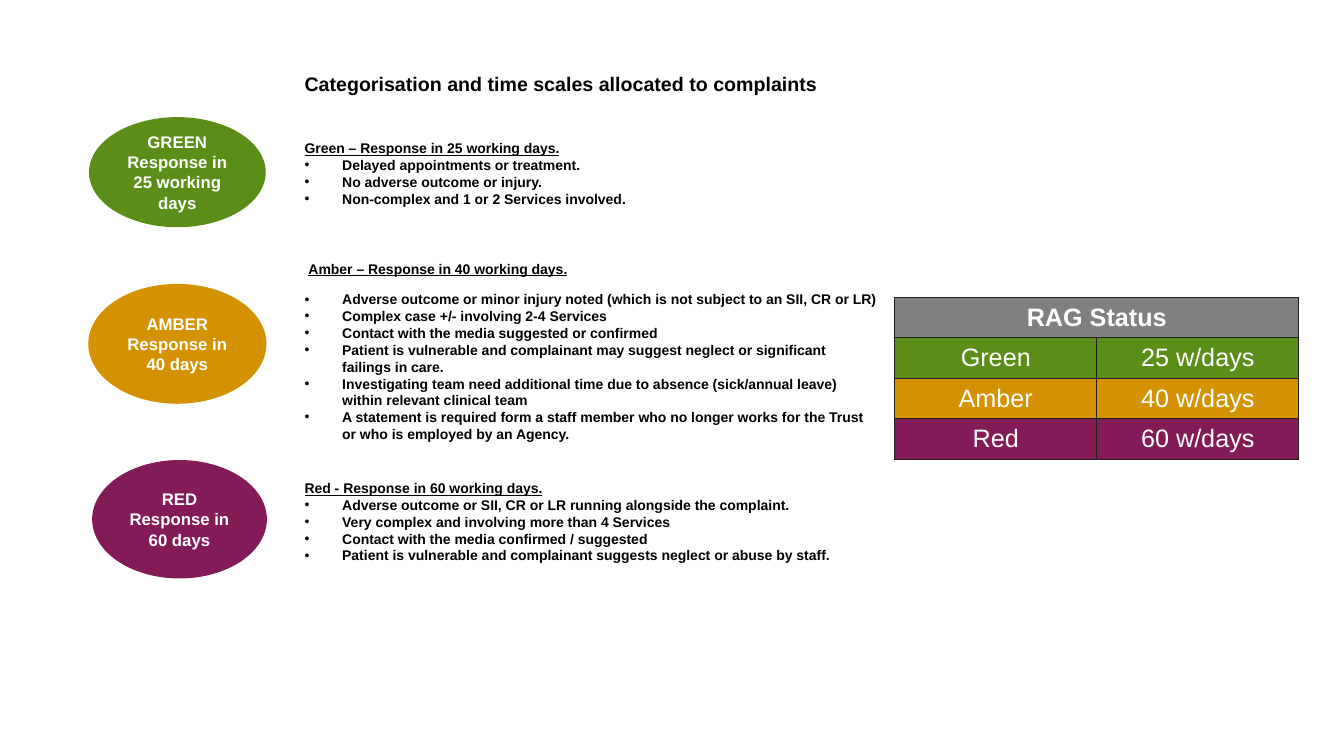
from lxml import etree
from pptx import Presentation
from pptx import util as u
from pptx.dml.color import RGBColor
from pptx.enum import shapes, text
from pptx.oxml import ns

FONT = "Arial"
BLACK, WHITE, GREY, BORDER = "000000", "FFFFFF", "808080", "231F20"
GREEN, AMBER, RED = "5A8E18", "D49200", "831B56"

# left, top, width, height in cm; outline in points
RATINGS = [
    ((2.26, 2.97, 4.42, 2.74), GREEN, 1, ["GREEN", "Response in 25 working days"]),
    ((2.26, 7.19, 4.42, 2.95), AMBER, 2, ["AMBER Response in 40 days"]),
    ((2.34, 11.61, 4.37, 2.95), RED, 1, ["RED", "Response in 60 days"]),
]

# heading, its indent in cm, points before and after it, criteria
CATEGORIES = [
    ("Green – Response in 25 working days.", 0, 0, 0, [
        "Delayed appointments or treatment.",
        "No adverse outcome or injury.",
        "Non-complex and 1 or 2 Services involved.",
    ]),
    ("Amber – Response in 40 working days.", 0.1, 38, 10, [
        "Adverse outcome or minor injury noted (which is not subject to an SII, CR or LR)",
        "Complex case +/- involving 2-4 Services",
        "Contact with the media suggested or confirmed",
        "Patient is vulnerable and complainant may suggest neglect or significant "
        "failings in care.",
        "Investigating team need additional time due to absence (sick/annual leave) "
        "within relevant clinical team",
        "A statement is required form a staff member who no longer works for the Trust "
        "or who is employed by an Agency.",
    ]),
    ("Red - Response in 60 working days.", 0, 26.6, 0, [
        "Adverse outcome or SII, CR or LR running alongside the complaint.",
        "Very complex and involving more than 4 Services",
        "Contact with the media confirmed / suggested",
        "Patient is vulnerable and complainant suggests neglect or abuse by staff.",
    ]),
]

STATUSES = [
    ("Green", "25 w/days", GREEN),
    ("Amber", "40 w/days", AMBER),
    ("Red", "60 w/days", RED),
]


def rgb(value):
    return RGBColor.from_string(value)


def cm_box(box):
    return [u.Cm(length) for length in box]


def add_run(paragraph, wording, size, color, bold=True, underline=False):
    run = paragraph.add_run()
    run.text = wording
    font = run.font
    font.name, font.size, font.bold = FONT, u.Pt(size), bold
    font.underline = underline
    font.color.rgb = rgb(color)


def next_paragraph(frame, index):
    return frame.paragraphs[0] if index == 0 else frame.add_paragraph()


def place(placeholder, box):
    """Move a placeholder to its box and let its text start at the top."""
    placeholder.left, placeholder.top, placeholder.width, placeholder.height = cm_box(box)
    frame = placeholder.text_frame
    frame.word_wrap = True
    frame.auto_size = text.MSO_AUTO_SIZE.NONE
    frame.vertical_anchor = text.MSO_ANCHOR.TOP
    return frame


def add_title(slide, box):
    heading = place(slide.shapes.title, box).paragraphs[0]
    heading.alignment = text.PP_ALIGN.LEFT
    add_run(heading, "Categorisation and time scales allocated to complaints", 14, BLACK)


def set_bullet(paragraph, left, hanging, bullet=None):
    properties = paragraph._p.get_or_add_pPr()
    properties.set("marL", str(u.Cm(left)))
    properties.set("indent", str(-u.Cm(hanging)))
    if bullet:
        etree.SubElement(properties, ns.qn("a:buChar")).set("char", bullet)
    else:
        etree.SubElement(properties, ns.qn("a:buNone"))


def add_categories(slide, box):
    frame = place(slide.placeholders[1], box)
    count = 0
    for heading, indent, before, after, criteria in CATEGORIES:
        lines = [(heading, indent, 0, None, before, after)]
        lines += [(criterion, 0.95, 0.95, "•", 0, 0) for criterion in criteria]
        for wording, left, hanging, bullet, above, below in lines:
            paragraph = next_paragraph(frame, count)
            set_bullet(paragraph, left, hanging, bullet)
            paragraph.space_before, paragraph.space_after = u.Pt(above), u.Pt(below)
            add_run(paragraph, wording, 10, BLACK, underline=bullet is None)
            count += 1


def add_rating(slide, box, color, outline, lines):
    oval = slide.shapes.add_shape(shapes.MSO_SHAPE.OVAL, *cm_box(box))
    oval.shadow.inherit = False
    oval.fill.solid()
    oval.fill.fore_color.rgb = rgb(color)
    oval.line.color.rgb = rgb(color)
    oval.line.width = u.Pt(outline)
    frame = oval.text_frame
    frame.word_wrap = True
    frame.vertical_anchor = text.MSO_ANCHOR.MIDDLE
    for index, wording in enumerate(lines):
        paragraph = next_paragraph(frame, index)
        paragraph.alignment = text.PP_ALIGN.CENTER
        add_run(paragraph, wording, 12, WHITE)


def style_cell(cell, color):
    properties = cell._tc.get_or_add_tcPr()
    for side in ("lnL", "lnR", "lnT", "lnB"):
        border = etree.SubElement(properties, ns.qn(f"a:{side}"), w=str(u.Pt(1)))
        fill = etree.SubElement(border, ns.qn("a:solidFill"))
        etree.SubElement(fill, ns.qn("a:srgbClr"), val=BORDER)
    cell.fill.solid()
    cell.fill.fore_color.rgb = rgb(color)
    cell.vertical_anchor = text.MSO_ANCHOR.MIDDLE


def add_status_table(slide, box):
    rows = [("RAG Status", "", GREY)] + STATUSES
    table = slide.shapes.add_table(len(rows), 2, *cm_box(box)).table
    table.cell(0, 0).merge(table.cell(0, 1))
    for row, (status, limit, color) in enumerate(rows):
        for column, wording in enumerate((status, limit)):
            cell = table.cell(row, column)
            style_cell(cell, color)
            if wording:
                paragraph = cell.text_frame.paragraphs[0]
                paragraph.alignment = text.PP_ALIGN.CENTER
                add_run(paragraph, wording, 18, WHITE, bold=row == 0)


def main():
    deck = Presentation()
    deck.slide_width, deck.slide_height = u.Cm(33.87), u.Cm(19.05)
    slide = deck.slides.add_slide(deck.slide_layouts[1])
    add_title(slide, (7.42, 1.68, 14.91, 1.5))
    add_categories(slide, (7.42, 3.39, 14.91, 11.52))
    for rating in RATINGS:
        add_rating(slide, *rating)
    add_status_table(slide, (22.55, 7.49, 10.18, 4.08))
    deck.save("out.pptx")


if __name__ == "__main__":
    main()
